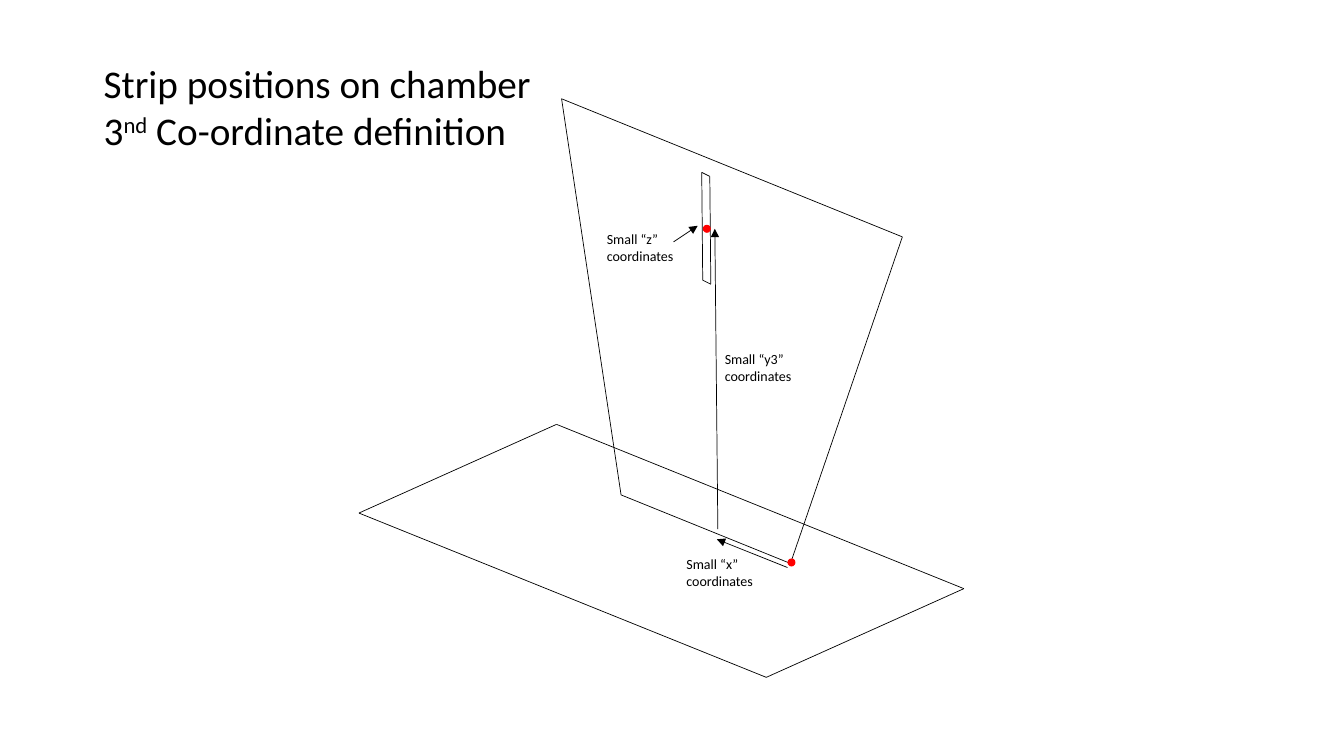
from collections import namedtuple
from dataclasses import dataclass

from lxml.etree import SubElement
from pptx import Presentation
from pptx.dml.color import RGBColor
from pptx.enum.shapes import MSO_CONNECTOR, MSO_SHAPE
from pptx.enum.text import MSO_AUTO_SIZE
from pptx.oxml.ns import qn
from pptx.util import Inches, Pt

Box = namedtuple("Box", "left top width height")


@dataclass(frozen=True)
class Theme:
    """Colours, font and sizes of the slide."""
    ink: RGBColor = RGBColor(0x00, 0x00, 0x00)
    marker: RGBColor = RGBColor(0xFF, 0x00, 0x00)
    font: str = "Calibri"
    title_size: Pt = Pt(28)
    label_size: Pt = Pt(10)
    line_width: Pt = Pt(0.5)
    dot_size: float = 0.08


THEME = Theme()


def add_line(slide, box, start, end, arrow=False):
    """Draw a thin line between two offsets within the box."""
    points = [Inches(value) for x, y in (start, end)
              for value in (box.left + x, box.top + y)]
    line = slide.shapes.add_connector(MSO_CONNECTOR.STRAIGHT, *points)
    line.line.color.rgb = THEME.ink
    line.line.width = THEME.line_width
    if arrow:
        SubElement(line.line._get_or_add_ln(), qn("a:tailEnd"), type="triangle")
    SubElement(line._element.spPr, qn("a:effectLst"))


def add_outline(slide, box, corners):
    """Join the corners with a closed ring of lines."""
    for start, end in zip(corners, corners[1:] + corners[:1]):
        add_line(slide, box, start, end)


def add_dot(slide, box, x, y):
    """Place a red marker at an offset within the box."""
    size = Inches(THEME.dot_size)
    dot = slide.shapes.add_shape(
        MSO_SHAPE.OVAL, Inches(box.left + x), Inches(box.top + y), size, size)
    dot.shadow.inherit = False
    dot.fill.solid()
    dot.fill.fore_color.rgb = THEME.marker
    dot.line.fill.background()


def add_text(slide, box, wrap):
    """Add an empty text box that grows with its text."""
    frame = slide.shapes.add_textbox(*(Inches(value) for value in box)).text_frame
    frame.word_wrap = wrap
    frame.auto_size = MSO_AUTO_SIZE.SHAPE_TO_FIT_TEXT
    return frame


def format_runs(frame, size):
    """Apply the theme font to every run."""
    for paragraph in frame.paragraphs:
        for run in paragraph.runs:
            run.font.name = THEME.font
            run.font.size = size
            run.font.color.rgb = THEME.ink


def add_label(slide, box, axis, x, y, width):
    """Name a coordinate at an offset within the box."""
    frame = add_text(slide, Box(box.left + x, box.top + y, width, 0.44), True)
    frame.text = f"Small “{axis}” coordinates"
    format_runs(frame, THEME.label_size)


def add_title(slide, box):
    """Write the two-line title with its superscript."""
    frame = add_text(slide, box, False)
    frame.text = "Strip positions on chamber"
    paragraph = frame.add_paragraph()
    for text in ("3", "nd", " Co-ordinate definition"):
        paragraph.add_run().text = text
    format_runs(frame, THEME.title_size)
    paragraph.runs[1].font._element.set("baseline", "30000")


def add_base_plane(slide, box):
    """Draw the base plane as a parallelogram."""
    side, drop = 1.96, 0.88
    add_outline(slide, box, [
        (0, drop), (side, 0), (box.width, box.height - drop),
        (box.width - side, box.height)])


def add_chamber(slide, box):
    """Draw the chamber with its origin and its x and y3 axes."""
    add_outline(slide, box, [
        (0, 0), (box.width, 1.37), (2.27, box.height), (0.59, 3.93)])
    add_label(slide, box, "x", 1.14, 4.48, 0.9)
    add_line(slide, box, (2.24, 4.65), (1.54, 4.37), arrow=True)
    add_dot(slide, box, 2.24, 4.56)
    add_line(slide, box, (1.55, 4.27), (1.52, 1.29), arrow=True)
    add_label(slide, box, "y3", 1.52, 2.45, 1)


def add_strip(slide, box):
    """Draw the strip with its centre and z pointer."""
    slant, drop = 0.01, 0.04
    add_outline(slide, box, [
        (0, 0), (box.width - slant, drop), (box.width, box.height),
        (slant, box.height - drop)])
    add_dot(slide, box, 0.01, 0.52)
    add_label(slide, box, "z", -1.04, 0.53, 0.89)
    add_line(slide, box, (-0.28, 0.69), (-0.04, 0.53), arrow=True)


def main():
    """Build and save the slide."""
    presentation = Presentation()
    presentation.slide_width = Inches(13.33)
    presentation.slide_height = Inches(7.5)
    slide = presentation.slides.add_slide(presentation.slide_layouts[6])
    add_title(slide, Box(0.93, 0.54, 4.49, 1.04))
    add_base_plane(slide, Box(3.56, 4.21, 6, 2.51))
    add_chamber(slide, Box(5.57, 0.98, 3.38, 4.61))
    add_strip(slide, Box(6.96, 1.71, 0.09, 1.11))
    presentation.save("out.pptx")


if __name__ == "__main__":
    main()
